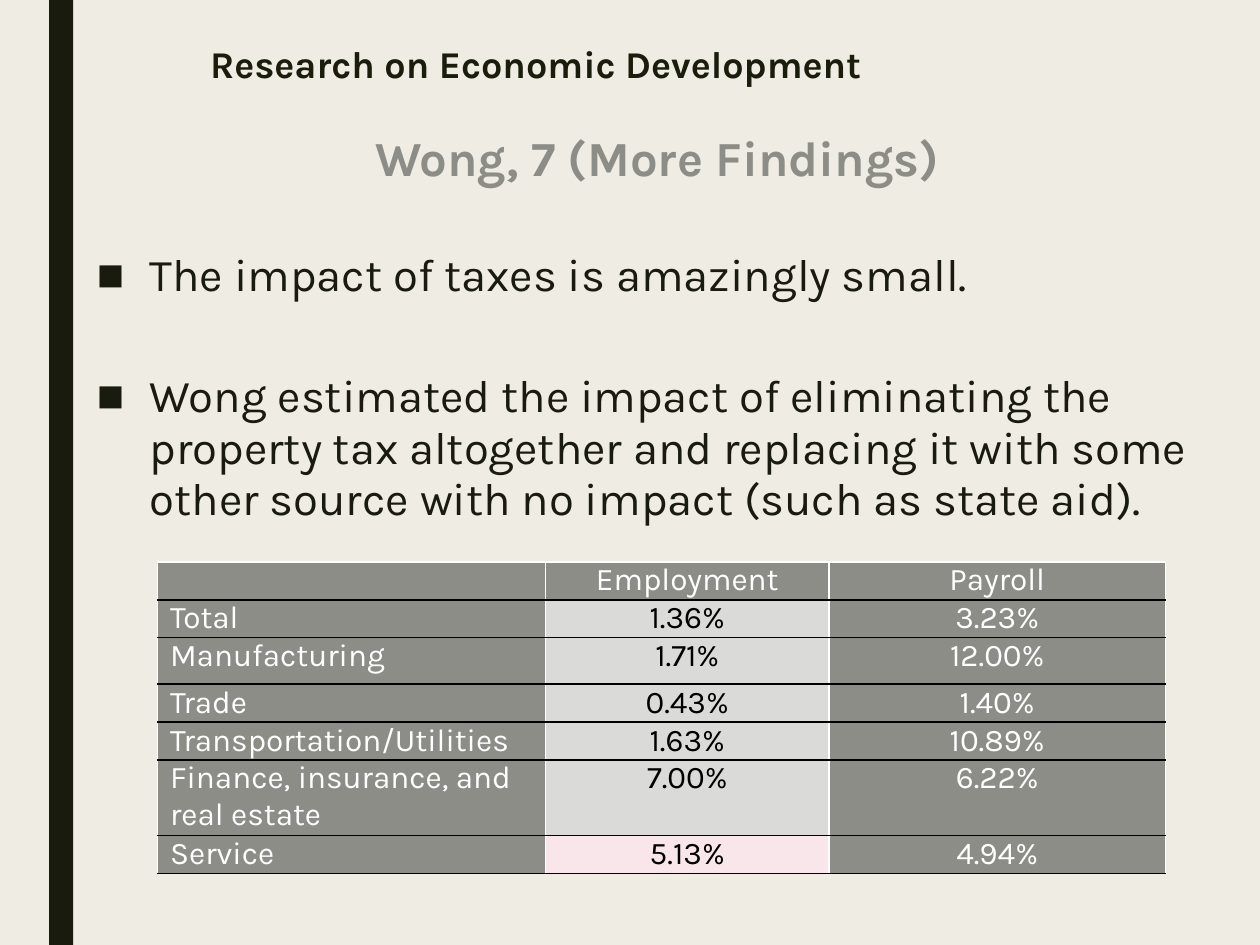
import dataclasses

import pptx
import pptx.dml.color
import pptx.enum.shapes
import pptx.enum.text
import pptx.oxml.ns
import pptx.util
from lxml import etree

Inches = pptx.util.Inches
Pt = pptx.util.Pt
Align = pptx.enum.text.PP_ALIGN
Anchor = pptx.enum.text.MSO_ANCHOR
qn = pptx.oxml.ns.qn

FONT = "Karla"
CREAM, DARK, GRAY = "EFEDE3", "191B0E", "8C8D86"
PALE, PINK, WHITE, BLACK = "DADBD9", "F9E6EA", "FFFFFF", "000000"


@dataclasses.dataclass
class Line:
    text: str
    size: float
    color: str = DARK
    bold: bool = False
    align: Align = Align.LEFT
    spacing: float = 0.94
    before: float = 0
    after: float = 0
    margin: float = 0
    bullet: bool = False


@dataclasses.dataclass
class Industry:
    name: str
    employment: str
    payroll: str
    height: float = 0.3
    employment_fill: str = PALE


def rgb(color: str) -> pptx.dml.color.RGBColor:
    return pptx.dml.color.RGBColor.from_string(color)


def paint(fill, color: str) -> None:
    fill.solid()
    fill.fore_color.rgb = rgb(color)


def style(paragraph, size: float, color: str, bold: bool = False) -> None:
    for run in paragraph.runs:
        run.font.name = FONT
        run.font.size = Pt(size)
        run.font.bold = bold
        run.font.color.rgb = rgb(color)


def indent(paragraph, line: Line) -> None:
    properties = paragraph._p.get_or_add_pPr()
    properties.set("marL", str(Inches(line.margin)))
    properties.set("indent", str(-Inches(line.margin) if line.bullet else 0))
    if line.bullet:
        etree.SubElement(properties, qn("a:buFont"), typeface="Arial")
        etree.SubElement(properties, qn("a:buChar"), char="■")


def add_lines(slide, left: float, top: float, width: float, height: float,
              lines: list[Line], anchor: Anchor) -> None:
    frame = slide.shapes.add_textbox(
        Inches(left), Inches(top), Inches(width), Inches(height)).text_frame
    frame.word_wrap = True
    frame.vertical_anchor = anchor
    for index, line in enumerate(lines):
        paragraph = frame.add_paragraph() if index else frame.paragraphs[0]
        paragraph.text = line.text
        paragraph.alignment = line.align
        paragraph.line_spacing = line.spacing
        paragraph.space_before = Pt(line.before)
        paragraph.space_after = Pt(line.after)
        indent(paragraph, line)
        style(paragraph, line.size, line.color, line.bold)


def add_borders(cell, top_color: str) -> None:
    properties = cell._tc.get_or_add_tcPr()
    sides = {"L": WHITE, "R": WHITE, "T": top_color, "B": BLACK}
    for side, color in sides.items():
        border = etree.SubElement(properties, qn(f"a:ln{side}"), w=str(Pt(1)))
        solid = etree.SubElement(border, qn("a:solidFill"))
        etree.SubElement(solid, qn("a:srgbClr"), val=color)


def fill_cell(cell, text: str, fill: str, color: str, align: Align,
              top_color: str) -> None:
    cell.margin_left = cell.margin_right = Inches(0.1)
    cell.margin_top = cell.margin_bottom = 0
    add_borders(cell, top_color)
    paint(cell.fill, fill)
    cell.text_frame.text = text
    paragraph = cell.text_frame.paragraphs[0]
    paragraph.alignment = align
    style(paragraph, 18, color)


def add_impact_table(slide, industries: list[Industry]) -> None:
    widths = [3.08, 2.25, 2.67]
    table = slide.shapes.add_table(
        len(industries), len(widths), Inches(1.25), Inches(4.46),
        Inches(sum(widths)), Inches(sum(i.height for i in industries))).table
    for column, width in zip(table.columns, widths):
        column.width = Inches(width)
    for index, industry in enumerate(industries):
        table.rows[index].height = Inches(industry.height)
        top_color = BLACK if index else WHITE
        employment_color = BLACK if index else WHITE
        name, employment, payroll = table.rows[index].cells
        fill_cell(name, industry.name, GRAY, WHITE, Align.LEFT, top_color)
        fill_cell(employment, industry.employment, industry.employment_fill,
                  employment_color, Align.CENTER, top_color)
        fill_cell(payroll, industry.payroll, GRAY, WHITE, Align.CENTER, top_color)


TITLE = [Line("Research on Economic Development", 21.6, "1A1D0C", True, spacing=0.89)]

FINDINGS = [
    Line("Wong, 7 (More Findings)", 28, GRAY, True, Align.CENTER,
         before=10, after=2, margin=0.09),
    Line("The impact of taxes is amazingly small.", 26,
         before=34, after=2, margin=0.42, bullet=True),
    Line("Wong estimated the impact of eliminating the property tax altogether "
         "and replacing it with some other source with no impact "
         "(such as state aid).", 26,
         before=38, after=2, margin=0.42, bullet=True),
]

INDUSTRIES = [
    Industry("", "Employment", "Payroll", employment_fill=GRAY),
    Industry("Total", "1.36%", "3.23%"),
    Industry("Manufacturing", "1.71%", "12.00%", height=0.37),
    Industry("Trade", "0.43%", "1.40%"),
    Industry("Transportation/Utilities", "1.63%", "10.89%"),
    Industry("Finance, insurance, and real estate", "7.00%", "6.22%", height=0.6),
    Industry("Service", "5.13%", "4.94%", employment_fill=PINK),
]


def main() -> None:
    deck = pptx.Presentation()
    deck.slide_width, deck.slide_height = Inches(10), Inches(7.5)
    slide = deck.slides.add_slide(deck.slide_layouts[6])

    # Background and side bar
    paint(slide.background.fill, CREAM)
    side_bar = slide.shapes.add_shape(
        pptx.enum.shapes.MSO_SHAPE.RECTANGLE,
        Inches(0.39), 0, Inches(0.19), Inches(7.5))
    side_bar.shadow.inherit = False
    paint(side_bar.fill, DARK)
    side_bar.line.fill.background()

    # Title and findings
    add_lines(slide, 1.57, 0.3, 8.2, 0.45, TITLE, Anchor.MIDDLE)
    add_lines(slide, 0.67, 1, 9, 4, FINDINGS, Anchor.TOP)

    # Estimated impact by industry
    add_impact_table(slide, INDUSTRIES)

    deck.save("out.pptx")


if __name__ == "__main__":
    main()
